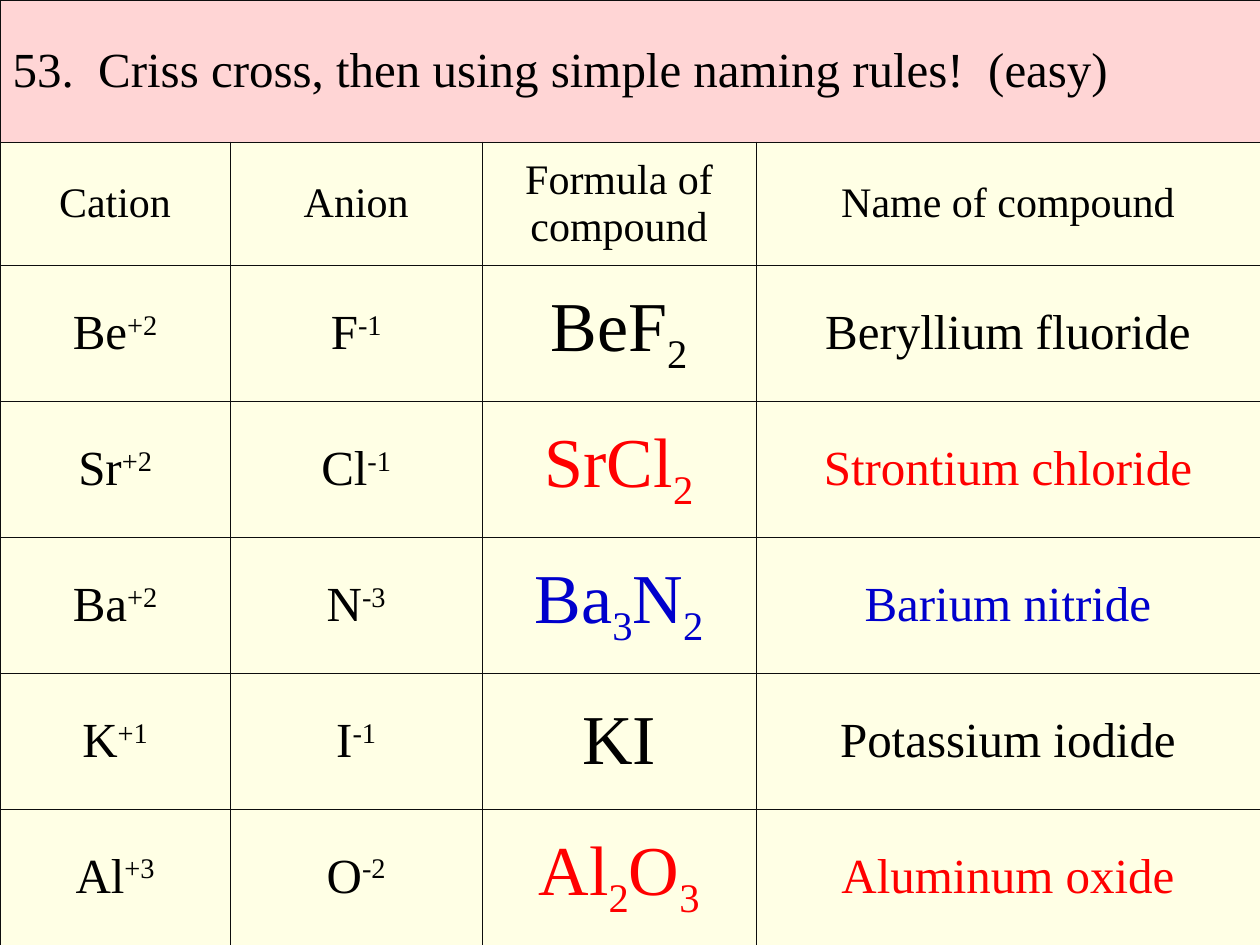
from lxml.etree import SubElement
from pptx import Presentation
from pptx.dml.color import RGBColor
from pptx.enum.text import MSO_ANCHOR as Anchor, PP_ALIGN as Align
from pptx.oxml.ns import qn
from pptx.util import Cm, Pt

BLACK, RED, BLUE = "000000", "FF0000", "0000CC"
SUPERSCRIPT, SUBSCRIPT = 30000, -25000
COLUMN_WIDTHS = [4.64, 5.08, 5.52, 10.16]
ROW_HEIGHTS = [2.86, 2.49] + [2.74] * 5
HEADINGS = ["Cation", "Anion", "Formula of compound", "Name of compound"]
COMPOUNDS = [
    (["Be", "+2"], ["F", "-1"], ["BeF", "2"], "Beryllium fluoride", BLACK),
    (["Sr", "+2"], ["Cl", "-1"], ["SrCl", "2"], "Strontium chloride", RED),
    (["Ba", "+2"], ["N", "-3"], ["Ba", "3", "N", "2"], "Barium nitride", BLUE),
    (["K", "+1"], ["I", "-1"], ["KI"], "Potassium iodide", BLACK),
    (["Al", "+3"], ["O", "-2"], ["Al", "2", "O", "3"], "Aluminum oxide", RED),
]


def color(hex_code):
    return RGBColor.from_string(hex_code)


class Worksheet:
    font = "Times New Roman"
    title_fill = "FFD5D5"
    body_fill = "FFFFE5"
    rule_color = "0D0D0D"
    rule_width = Pt(0.25)

    def __init__(self, slide):
        self.slide = slide

    def grid(self, widths, heights):
        frame = self.slide.shapes.add_table(
            len(heights), len(widths), 0, 0, Cm(sum(widths)), Cm(sum(heights)))
        table = frame.table
        for column, width in zip(table.columns, widths):
            column.width = Cm(width)
        for row, height in zip(table.rows, heights):
            row.height = Cm(height)
        for cell in table.iter_cells():
            self.borders(cell)
            self.fill(cell, self.body_fill)
        return table

    def borders(self, cell):
        properties = cell._tc.get_or_add_tcPr()
        for side in ("lnL", "lnR", "lnT", "lnB"):
            rule = SubElement(properties, qn(f"a:{side}"), w=str(self.rule_width))
            paint = SubElement(rule, qn("a:solidFill"))
            SubElement(paint, qn("a:srgbClr"), val=self.rule_color)

    def fill(self, cell, hex_code):
        cell.fill.solid()
        cell.fill.fore_color.rgb = color(hex_code)

    def title(self, table, wording):
        heading = table.cell(0, 0)
        heading.merge(table.cell(0, len(table.columns) - 1))
        self.fill(heading, self.title_fill)
        self.text(heading, [wording], 28, align=Align.LEFT)

    def text(self, cell, parts, size, ink=BLACK, shift=0, align=Align.CENTER):
        cell.vertical_anchor = Anchor.MIDDLE
        paragraph = cell.text_frame.paragraphs[0]
        paragraph.alignment = align
        paragraph.space_before = Pt(size * 0.2)
        for position, part in enumerate(parts):
            run = paragraph.add_run()
            run.text = part
            run.font.name = self.font
            run.font.size = Pt(size)
            run.font.color.rgb = color(ink)
            if position % 2:
                run.font._element.set("baseline", str(shift))


def main():
    deck = Presentation()
    deck.slide_width, deck.slide_height = Cm(25.4), Cm(19.05)
    sheet = Worksheet(deck.slides.add_slide(deck.slide_layouts[6]))
    table = sheet.grid(COLUMN_WIDTHS, ROW_HEIGHTS)
    sheet.title(table, "53.  Criss cross, then using simple naming rules!  (easy)")
    for column, heading in enumerate(HEADINGS):
        sheet.text(table.cell(1, column), [heading], 24)
    for row, (cation, anion, formula, name, ink) in enumerate(COMPOUNDS, start=2):
        sheet.text(table.cell(row, 0), cation, 28, shift=SUPERSCRIPT)
        sheet.text(table.cell(row, 1), anion, 28, shift=SUPERSCRIPT)
        sheet.text(table.cell(row, 2), formula, 40, ink, SUBSCRIPT)
        sheet.text(table.cell(row, 3), [name], 28, ink)
    deck.save("out.pptx")


if __name__ == "__main__":
    main()
